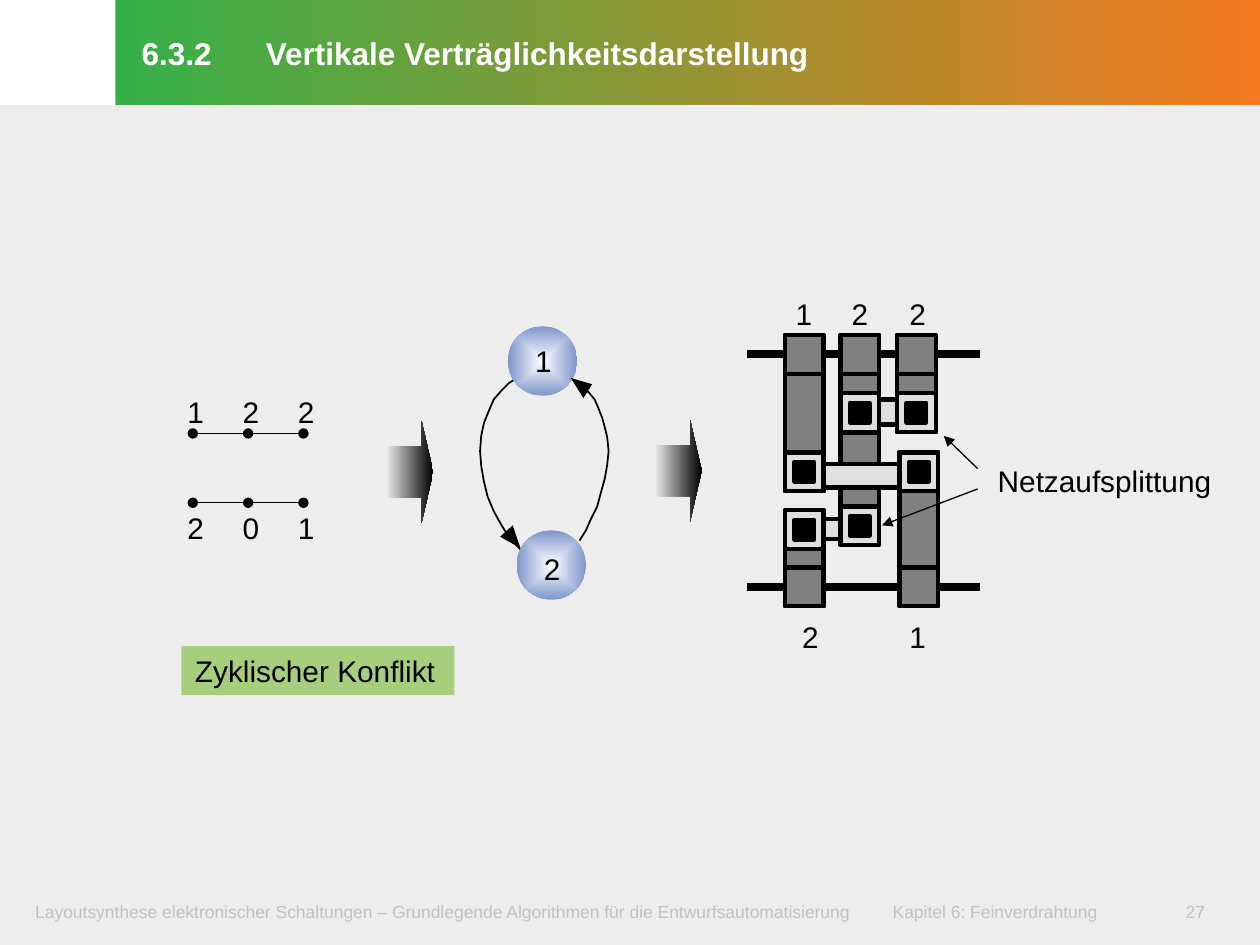
from lxml.etree import SubElement
from pptx import Presentation
from pptx.dml.color import RGBColor
from pptx.enum.shapes import MSO_CONNECTOR, MSO_SHAPE
from pptx.enum.text import MSO_ANCHOR, MSO_AUTO_SIZE, PP_ALIGN
from pptx.oxml.ns import qn
from pptx.util import Pt

WHITE = RGBColor(0xFF, 0xFF, 0xFF)
BLACK = RGBColor(0, 0, 0)
PAPER = RGBColor(0xED, 0xED, 0xED)
FOOTER_GREY = RGBColor(0xC0, 0xC0, 0xC0)
GREEN = RGBColor(0x35, 0xB0, 0x48)
ORANGE = RGBColor(0xF4, 0x79, 0x20)
PALE = RGBColor(0xEA, 0xEA, 0xEA)
NODE_BLUE = RGBColor(0x7D, 0x95, 0xCA)
COLUMN_GREY = RGBColor(0x80, 0x80, 0x80)
METAL_GREY = RGBColor(0xDF, 0xDF, 0xDF)
TAG_GREEN = RGBColor(0xA7, 0xCE, 0x7C)

# Content, all lengths in points
TITLE = "6.3.2\tVertikale Verträglichkeitsdarstellung"
FOOTER = ("Layoutsynthese elektronischer Schaltungen – Grundlegende Algorithmen "
          "für die Entwurfsautomatisierung\tKapitel 6: Feinverdrahtung")
PAGE = "27"
CONFLICT = "Zyklischer Konflikt"
SPLIT = "Netzaufsplittung"

PIN_ROWS = [("122", 221, 247.7), ("201", 287.3, 287.3)]  # pins, label top, line y
PIN_LEFT, PIN_PITCH = 110.2, 31.6
STEP_ARROWS = [(221, 240.5), (374.4, 239.8)]
NODES = [("1", 290.2, 186.5, 192.2), ("2", 295.2, 303.1, 311)]  # x, y, label top
EDGES = [
    [(326.9, 216.7), (331.9, 219.6), (336.2, 223.9), (339.8, 228.2), (342, 233.3),
     (344.2, 239), (345.6, 244.1), (347, 249.8), (347.8, 257.8), (347, 265.7),
     (345.6, 273.6), (343.4, 281.5), (341.3, 289.4), (337.7, 296.6),
     (334.8, 303.1), (331.2, 308.9)],
    [(296.6, 215.3), (290.9, 218.9), (286.6, 223.2), (282.2, 228.2), (279.4, 234.7),
     (276.5, 241.9), (275, 249.1), (274.3, 257.8), (275, 266.4), (276.5, 275),
     (278.6, 283.7), (282.2, 292.3), (286.6, 300.2), (291.6, 308.2), (297.4, 313.9)],
]
EDGE_TIPS = [
    [(297.4, 313.2), (293, 300.2), (285.8, 306.7)],
    [(326.2, 216), (333.4, 227.5), (338.4, 219.6)],
]

RAILS = [202.3, 335.5]
LEFT, MIDDLE, RIGHT, RIGHT_LOW = 448.5, 480.2, 512.6, 514
TRACK, PAD_TOP, PAD_BOTTOM = 22.2, 191.5, 324.2
STRAPS = [(485.3, 228.3, 47.5, 14.4), (468.7, 265, 47.5, 13.7),
          (470.9, 296.6, 10.8, 11.5)]
COLUMNS = [(LEFT, PAD_TOP, 89.2, PAD_TOP), (MIDDLE, PAD_TOP, 55.5, PAD_TOP),
           (RIGHT, PAD_TOP, 55.5, PAD_TOP), (LEFT, 291.6, 54.8, PAD_BOTTOM),
           (RIGHT_LOW, 258.5, 88, PAD_BOTTOM)]
VIAS = [(LEFT, 258.5), (LEFT, 291.6), (MIDDLE, 289.4), (MIDDLE, 224.7),
        (RIGHT, 224.7), (RIGHT_LOW, 258.5)]
COLUMN_LABELS = [("1", 447, 165), ("2", 479, 165), ("2", 512, 165),
                 ("2", 450.7, 350), ("1", 512, 350)]
CALLOUTS = [((558.7, 279.4), (504, 300.2)), ((558.7, 267.8), (539.3, 249.1))]

prs = Presentation()
prs.slide_width, prs.slide_height = Pt(720), Pt(540)
slide = prs.slides.add_slide(prs.slide_layouts[5])
shapes = slide.shapes


def set_gradient(shape, start, end, radial=False):
    shape.fill.gradient()
    shape.fill.gradient_angle = 0
    for stop, color, position in zip(shape.fill.gradient_stops, (start, end), (0, 1)):
        stop.color.rgb, stop.position = color, position
    if radial:
        grad = shape.element.spPr.find(qn("a:gradFill"))
        grad.remove(grad.find(qn("a:lin")))
        focus = SubElement(grad, qn("a:path"), {"path": "shape"})
        SubElement(focus, qn("a:fillToRect"), dict.fromkeys("ltrb", "50000"))


def add_block(x, y, w, h, fill=None, line=None, kind=MSO_SHAPE.RECTANGLE):
    block = shapes.add_shape(kind, Pt(x), Pt(y), Pt(w), Pt(h))
    block.shadow.inherit = False
    if fill is not None:
        block.fill.solid()
        block.fill.fore_color.rgb = fill
    if line:
        block.line.color.rgb, block.line.width = BLACK, Pt(line)
    else:
        block.line.fill.background()
    return block


def set_text(shape, text, size, color, insets, tab=None, spacing=None, bold=False):
    frame = shape.text_frame
    frame.word_wrap, frame.auto_size = True, MSO_AUTO_SIZE.NONE
    (frame.margin_left, frame.margin_top,
     frame.margin_right, frame.margin_bottom) = map(Pt, insets)
    paragraph = frame.paragraphs[0]
    paragraph.text = text
    paragraph.alignment = PP_ALIGN.LEFT
    if spacing:
        paragraph.line_spacing = Pt(spacing)
    if tab:
        tabs = SubElement(paragraph._p.get_or_add_pPr(), qn("a:tabLst"))
        SubElement(tabs, qn("a:tab"), pos=str(Pt(tab)), algn="l")
    font = paragraph.font
    font.name, font.size, font.bold, font.color.rgb = "Arial", Pt(size), bold, color


def add_label(text, x, y, w, h=28, size=17, color=BLACK,
              insets=(7.7, 3.8, 7.7, 3.8), **style):
    label = shapes.add_textbox(Pt(x), Pt(y), Pt(w), Pt(h))
    set_text(label, text, size, color, insets, **style)
    return label


def add_line(start, end, width=0.75, head=None, tail=None):
    line = shapes.add_connector(MSO_CONNECTOR.STRAIGHT, *map(Pt, start + end))
    line.line.color.rgb, line.line.width = BLACK, Pt(width)
    for tag, style in (("a:headEnd", head), ("a:tailEnd", tail)):
        if style:
            SubElement(line.line._get_or_add_ln(), qn(tag), type=style)
    SubElement(line.element.spPr, qn("a:effectLst"))


def add_outline(points, closed):
    (x, y), *rest = [(Pt(px), Pt(py)) for px, py in points]
    builder = shapes.build_freeform(x, y)
    builder.add_line_segments(rest, close=closed)
    outline = builder.convert_to_shape()
    outline.shadow.inherit = False
    if closed:
        outline.fill.solid()
        outline.fill.fore_color.rgb = BLACK
        outline.line.fill.background()
    else:
        outline.fill.background()
        outline.line.color.rgb, outline.line.width = BLACK, Pt(1)


# Page ground, footer and title
ground = add_block(0, 60, 720, 480, PAPER)
shapes._spTree.insert(2, ground.element)
footer_style = dict(h=23, size=10, color=FOOTER_GREY, insets=(8.6, 4.3, 8.6, 4.3))
add_label(FOOTER, 11.5, 510.5, 660, tab=490, **footer_style)
add_label(PAGE, 668.9, 510.5, 42.5, **footer_style)

title = shapes.title
title.left, title.top, title.width, title.height = Pt(66), Pt(0), Pt(654), Pt(60)
set_gradient(title, GREEN, ORANGE)
set_text(title, TITLE, 18, WHITE, (15, 3.6, 7.2, 5), tab=70.9, spacing=23.5, bold=True)
title.text_frame.vertical_anchor = MSO_ANCHOR.MIDDLE

# Channel with its pins
for pins, label_top, line_y in PIN_ROWS:
    for i, pin in enumerate(pins):
        x = PIN_LEFT + i * PIN_PITCH
        add_label(pin, x - 10.8, label_top, 26.6)
        if i:
            add_line((x - PIN_PITCH, line_y), (x, line_y),
                     head="oval" if i == 1 else None, tail="oval")

# Arrows between the three stages
for x, y in STEP_ARROWS:
    arrow = add_block(x, y, 26.6, 58.3, kind=MSO_SHAPE.RIGHT_ARROW)
    arrow.adjustments[0], arrow.adjustments[1] = 0.5, 0.25
    set_gradient(arrow, PALE, BLACK)

# Cyclic constraint graph
for edge in EDGES:
    add_outline(edge, closed=False)
for name, x, y, label_top in NODES:
    node = add_block(x, y, 39.6, 39.6, kind=MSO_SHAPE.OVAL)
    set_gradient(node, WHITE, NODE_BLUE, radial=True)
    add_label(name, x + 7.9, label_top, 39.6)
for tip in EDGE_TIPS:
    add_outline(tip, closed=True)

# Routed channel: rails, split column, straps, columns, vias
for y in RAILS:
    add_line((427, y), (560, y), width=5)
add_block(MIDDLE, 247.5, TRACK, 44.6, COLUMN_GREY, 2.5)
for strap in STRAPS:
    add_block(*strap, METAL_GREY, 2.5)
for x, top, height, pad_top in COLUMNS:
    add_block(x, top, TRACK, height, COLUMN_GREY, 2.5)
    add_block(x, pad_top, TRACK, TRACK, COLUMN_GREY, 2.5)
for x, y in VIAS:
    add_block(x, y, TRACK, TRACK, METAL_GREY, 2.5)
    add_block(x + 5.5, y + 5.5, 11.2, 11.2, BLACK, 2.5)
for text, x, y in COLUMN_LABELS:
    add_label(text, x, y, 24.5)

# Conflict tag and callout
tag = add_label(CONFLICT, 103.7, 369.2, 156)
tag.fill.solid()
tag.fill.fore_color.rgb = TAG_GREEN
callout = add_label(SPLIT, 555.1, 257.8, 144.7, 32.4,
                    insets=(15, 3.6, 7.2, 5), spacing=23.5)
callout.text_frame.word_wrap = False
for start, end in CALLOUTS:
    add_line(start, end, tail="triangle")

prs.save("out.pptx")
